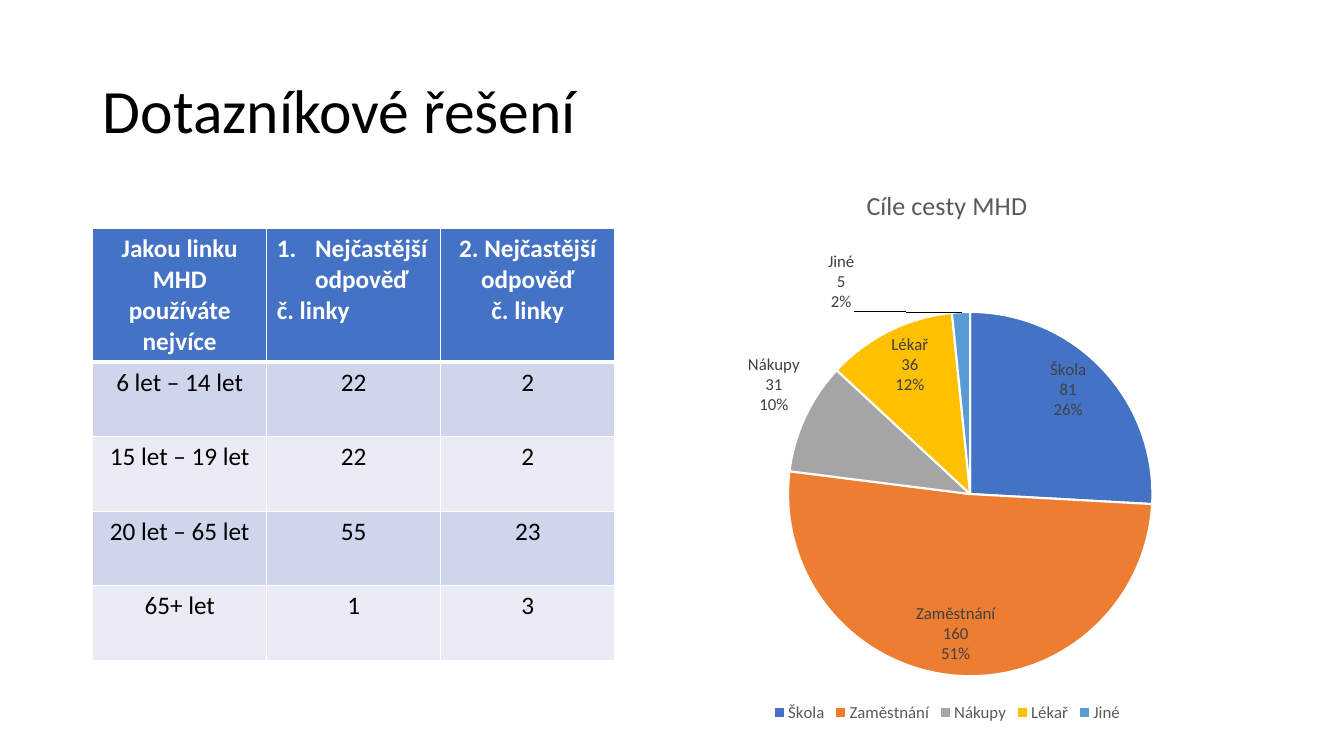
from dataclasses import dataclass

from lxml import etree
from pptx import Presentation
from pptx.chart.data import CategoryChartData
from pptx.dml.color import RGBColor
from pptx.enum.chart import XL_CHART_TYPE, XL_LABEL_POSITION, XL_LEGEND_POSITION
from pptx.enum.text import MSO_ANCHOR, PP_ALIGN
from pptx.oxml import parse_xml
from pptx.oxml.ns import nsdecls, qn
from pptx.util import Emu, Inches, Pt

PIE = XL_CHART_TYPE.PIE
BEST = XL_LABEL_POSITION.BEST_FIT
BOTTOM = XL_LEGEND_POSITION.BOTTOM
LEFT, CENTER = PP_ALIGN.LEFT, PP_ALIGN.CENTER
MIDDLE = MSO_ANCHOR.MIDDLE

FONT = "Calibri"
WIDE, HIGH = Inches(13.33), Inches(7.5)
WHITE, BLACK, BLUE, GREY = "FFFFFF", "000000", "4472C4", "595959"
BANDS = ("CFD5EA", "E9EBF5")
HEAD_ROW, BODY_ROW = 12.27, 9.87


@dataclass(frozen=True)
class Area:
    """Place on the slide, in percent of its width and height."""
    left: float
    top: float
    width: float
    height: float

    def box(self) -> tuple[Emu, Emu, Emu, Emu]:
        return (across(self.left), down(self.top),
                across(self.width), down(self.height))


@dataclass(frozen=True)
class Line:
    """One paragraph of a cell; a newline in the text is a line break."""
    text: str
    align: PP_ALIGN = CENTER
    number: bool = False


@dataclass(frozen=True)
class Slice:
    name: str
    value: int
    color: str


TITLE = Area(6.9, 5.33, 86.25, 19.33)
TABLE = Area(6.9, 30.27, 38.85, HEAD_ROW + 4 * BODY_ROW)
CHART = Area(45.75, 22, 49.43, 74.13)

HEADS = (
    (Line("Jakou linku MHD používáte nejvíce"),),
    (Line("Nejčastější odpověď", LEFT, True), Line("č. linky", LEFT)),
    (Line("2. Nejčastější odpověď\nč. linky"),),
)
ANSWERS = (
    ("6 let – 14 let", "22", "2"),
    ("15 let – 19 let", "22", "2"),
    ("20 let – 65 let", "55", "23"),
    ("65+ let", "1", "3"),
)
GOALS = (
    Slice("Škola", 81, BLUE),
    Slice("Zaměstnání", 160, "ED7D31"),
    Slice("Nákupy", 31, "A5A5A5"),
    Slice("Lékař", 36, "FFC000"),
    Slice("Jiné", 5, "5B9BD5"),
)


def across(share: float) -> Emu:
    return Emu(round(WIDE * share / 100))


def down(share: float) -> Emu:
    return Emu(round(HIGH * share / 100))


def rgb(code: str) -> RGBColor:
    return RGBColor.from_string(code)


def style(font, size: float, color: str, bold: bool = False) -> None:
    font.name, font.size, font.bold = FONT, Pt(size), bold
    font.color.rgb = rgb(color)


def add_run(para, text: str, size: float, color: str, bold: bool = False) -> None:
    run = para.add_run()
    run.text = text
    style(run.font, size, color, bold)


def add_title(slide) -> None:
    title = slide.shapes.title
    title.left, title.top, title.width, title.height = TITLE.box()
    title.text_frame.vertical_anchor = MIDDLE
    para = title.text_frame.paragraphs[0]
    para.alignment, para.line_spacing = LEFT, 0.9
    add_run(para, "Dotazníkové řešení", 44, BLACK)


def edge(cell, side: str, width: float) -> None:
    line = etree.SubElement(cell._tc.get_or_add_tcPr(), qn(f"a:ln{side}"),
                            w=str(Pt(width)))
    fill = etree.SubElement(line, qn("a:solidFill"))
    etree.SubElement(fill, qn("a:srgbClr"), val=WHITE)


def fill_cell(cell, lines: tuple[Line, ...], fill: str, color: str,
              bold: bool, top: float, bottom: float) -> None:
    for side, width in zip("LRTB", (1, 1, top, bottom)):
        edge(cell, side, width)
    cell.fill.solid()
    cell.fill.fore_color.rgb = rgb(fill)
    frame = cell.text_frame
    for i, line in enumerate(lines):
        para = frame.add_paragraph() if i else frame.paragraphs[0]
        para.alignment = line.align
        if line.number:
            props = para._p.get_or_add_pPr()
            props.set("marL", str(Inches(0.38)))
            props.set("indent", str(-Inches(0.38)))
            etree.SubElement(props, qn("a:buFont"), typeface="+mj-lt")
            etree.SubElement(props, qn("a:buAutoNum"), type="arabicPeriod")
        for j, part in enumerate(line.text.split("\n")):
            if j:
                para.add_line_break()
            add_run(para, part, 18, color, bold)


def add_table(slide) -> None:
    count = len(HEADS)
    table = slide.shapes.add_table(len(ANSWERS) + 1, count, *TABLE.box()).table
    for col in table.columns:
        col.width = across(TABLE.width / count)
    for i, row in enumerate(table.rows):
        row.height = down(BODY_ROW if i else HEAD_ROW)
    for c, lines in enumerate(HEADS):
        fill_cell(table.cell(0, c), lines, BLUE, WHITE, True, 1, 3)
    for r, answer in enumerate(ANSWERS):
        for c, text in enumerate(answer):
            fill_cell(table.cell(r + 1, c), (Line(text),), BANDS[r % 2],
                      BLACK, False, 1 if r else 3, 1)


def layout(x: float, y: float, size: str = "") -> str:
    return (f'<c:layout {nsdecls("c")}><c:manualLayout>{size}'
            f'<c:x val="{x}"/><c:y val="{y}"/>'
            '</c:manualLayout></c:layout>')


def place_pie(chart) -> None:
    area = chart._chartSpace.chart.plotArea
    for old in area.findall(qn("c:layout")):
        area.remove(old)
    spot = parse_xml(layout(0.26, 0.26, '<c:layoutTarget val="inner"/>'
                            '<c:xMode val="edge"/><c:yMode val="edge"/>'))
    for tag, share in (("c:w", 0.55), ("c:h", 0.65)):
        etree.SubElement(spot[0], qn(tag), val=str(share))
    area.insert(0, spot)


def add_labels(series) -> None:
    labels = series.data_labels
    labels.show_category_name = labels.show_value = True
    labels.show_percentage = True
    labels.position = BEST
    style(labels.font, 12, "404040")
    root = labels._element
    mark = etree.Element(qn("c:separator"))
    mark.text = "\n"
    root.find(qn("c:showBubbleSize")).addnext(mark)
    shown = "".join(
        f'<c:show{name} val="{flag}"/>' for name, flag in (
            ("LegendKey", 0), ("Val", 1), ("CatName", 1),
            ("SerName", 0), ("Percent", 1), ("BubbleSize", 0)))
    root.insert(0, parse_xml(
        f'<c:dLbl {nsdecls("c")}><c:idx val="{len(GOALS) - 1}"/>'
        f'{layout(-0.18, 0.01)}<c:dLblPos val="bestFit"/>{shown}'
        '<c:separator>\n</c:separator></c:dLbl>'))


def add_chart(slide) -> None:
    name = "Cíle cesty MHD"
    data = CategoryChartData()
    data.categories = [goal.name for goal in GOALS]
    data.add_series(name, [goal.value for goal in GOALS])
    chart = slide.shapes.add_chart(PIE, *CHART.box(), data).chart
    style(chart.font, 10, BLACK)
    chart.has_title = True
    add_run(chart.chart_title.text_frame.paragraphs[0], name, 18.6, GREY)
    chart.chart_title.include_in_layout = False
    chart.has_legend = True
    chart.legend.position = BOTTOM
    chart.legend.include_in_layout = False
    style(chart.legend.font, 12, GREY)
    plot = chart.plots[0]
    plot.vary_by_categories = True
    series = plot.series[0]
    for i, goal in enumerate(GOALS):
        form = series.points[i].format
        form.fill.solid()
        form.fill.fore_color.rgb = rgb(goal.color)
        form.line.color.rgb = rgb(WHITE)
        form.line.width = Pt(1.5)
    add_labels(series)
    place_pie(chart)


def main() -> None:
    deck = Presentation()
    deck.slide_width, deck.slide_height = WIDE, HIGH
    slide = deck.slides.add_slide(deck.slide_layouts[5])
    add_title(slide)
    add_chart(slide)
    add_table(slide)
    deck.save("out.pptx")


if __name__ == "__main__":
    main()
